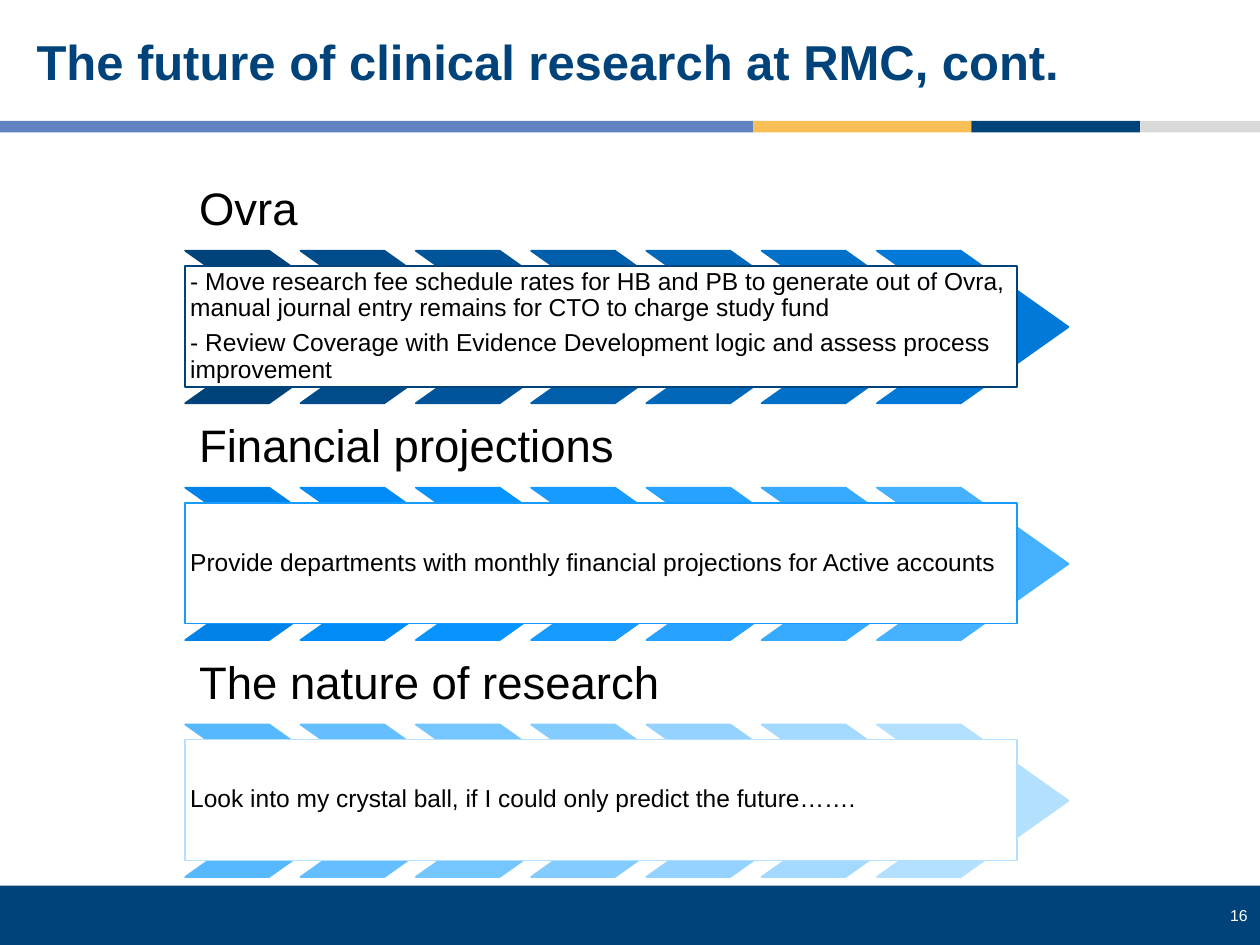
from colorsys import hls_to_rgb, rgb_to_hls

from pptx import Presentation
from pptx.dml.color import RGBColor
from pptx.enum.shapes import MSO_SHAPE
from pptx.enum.text import MSO_ANCHOR, MSO_AUTO_SIZE, PP_ALIGN
from pptx.util import Inches, Pt

RECTANGLE, CHEVRON = MSO_SHAPE.RECTANGLE, MSO_SHAPE.CHEVRON
MIDDLE, BOTTOM = MSO_ANCHOR.MIDDLE, MSO_ANCHOR.BOTTOM
LEFT, RIGHT = PP_ALIGN.LEFT, PP_ALIGN.RIGHT
NO_AUTOFIT = MSO_AUTO_SIZE.NONE

WIDTH, HEIGHT = 10, 7.5
NAVY, WHITE, BLACK = "00437B", "FFFFFF", "000000"
PALE_BLUE = "B3E0FF"
SECTION_LEFT, SECTION_TOP, SECTION_PITCH = 1.47, 1.39, 1.88
CHEVRON_COUNT, CHEVRON_PITCH = 7, 0.915
STRIPE_PARTS = [(0, 5.98, "6283C2"), (5.98, 1.73, "F8BF56"),
                (7.71, 1.34, NAVY), (9.05, 0.95, "D9D9D9")]
SECTIONS = [
    ("Ovra", [
        "- Move research fee schedule rates for HB and PB to generate out of Ovra, "
        "manual journal entry remains for CTO to charge study fund",
        "- Review Coverage with Evidence Development logic and assess process improvement",
    ]),
    ("Financial projections", [
        "Provide departments with monthly financial projections for Active accounts",
    ]),
    ("The nature of research", [
        "Look into my crystal ball, if I could only predict the future…….",
    ]),
]


def color(value):
    """Turn a hex string into a colour."""
    return RGBColor.from_string(value)


def blend(share):
    """Return the hex colour at a share of the way from navy to pale blue."""
    start, end = (rgb_to_hls(*(part / 255 for part in color(value)))
                  for value in (NAVY, PALE_BLUE))
    mixed = (a + (b - a) * share for a, b in zip(start, end))
    return "".join(f"{round(part * 255):02X}" for part in hls_to_rgb(*mixed))


def place(shape, left, top, width, height):
    """Move and size a shape, in inches."""
    shape.left, shape.top = Inches(left), Inches(top)
    shape.width, shape.height = Inches(width), Inches(height)


def add_block(slide, kind, box, fill, line=None):
    """Add a filled preset shape with an optional outline."""
    shape = slide.shapes.add_shape(kind, *map(Inches, box))
    shape.shadow.inherit = False
    shape.fill.solid()
    shape.fill.fore_color.rgb = color(fill)
    if line:
        shape.line.color.rgb = color(line)
        shape.line.width = Pt(1)
    else:
        shape.line.fill.background()
    return shape


def write(shape, texts, size, ink=BLACK, inset=0.1, anchor=MIDDLE,
          align=LEFT, bold=False, space_share=0.35):
    """Fill a shape with evenly formatted paragraphs."""
    frame = shape.text_frame
    frame.word_wrap = True
    frame.auto_size = NO_AUTOFIT
    frame.vertical_anchor = anchor
    frame.margin_left = frame.margin_right = Inches(inset)
    frame.margin_top = frame.margin_bottom = Inches(min(inset, 0.11))
    frame.text = "\n".join(texts)
    for paragraph in frame.paragraphs:
        paragraph.alignment = align
        paragraph.line_spacing = 0.9
        paragraph.space_after = Pt(size * space_share)
        font = paragraph.font
        font.name, font.size, font.bold = "Arial", Pt(size), bold
        font.color.rgb = color(ink)


def add_text(slide, box, texts, size, **options):
    """Add a text box with formatted paragraphs."""
    write(slide.shapes.add_textbox(*map(Inches, box)), texts, size, **options)


def add_frame(slide):
    """Add the title, the coloured stripe and the footer with its number."""
    title = slide.shapes.title
    place(title, 0.19, 0.17, 9.57, 0.69)
    write(title, ["The future of clinical research at RMC, cont."], 28,
          ink=NAVY, bold=True, space_share=0)
    add_block(slide, RECTANGLE, (0, 7.03, WIDTH, HEIGHT - 7.03), NAVY)
    add_text(slide, (9.31, 7.15, 0.69, 0.25), ["16"], 9,
             ink=WHITE, align=RIGHT, space_share=0)
    for left, width, fill in STRIPE_PARTS:
        add_block(slide, RECTANGLE, (left, 0.96, width, 0.09), fill)


def add_section(slide, index, heading, texts):
    """Add a heading and a framed text over a row of chevrons."""
    top = SECTION_TOP + index * SECTION_PITCH
    add_text(slide, (SECTION_LEFT, top, 6.51, 0.59), [heading], 26,
             inset=0.11, anchor=BOTTOM)
    last_step = len(SECTIONS) * CHEVRON_COUNT - 1
    for column in range(CHEVRON_COUNT):
        shade = blend((index * CHEVRON_COUNT + column) / last_step)
        left = SECTION_LEFT + column * CHEVRON_PITCH
        chevron = add_block(slide, CHEVRON, (left, top + 0.6, 1.52, 1.21), shade, shade)
        chevron.adjustments[0] = 0.706
    border = blend(index / (len(SECTIONS) - 1))
    panel = add_block(slide, RECTANGLE, (SECTION_LEFT, top + 0.72, 6.6, 0.96),
                      WHITE, border)
    write(panel, texts, 14, inset=0.04)


def main():
    """Build the slide and save it."""
    presentation = Presentation()
    presentation.slide_width, presentation.slide_height = Inches(WIDTH), Inches(HEIGHT)
    slide = presentation.slides.add_slide(presentation.slide_layouts[5])
    add_frame(slide)
    for index, (heading, texts) in enumerate(SECTIONS):
        add_section(slide, index, heading, texts)
    presentation.save("out.pptx")


if __name__ == "__main__":
    main()
